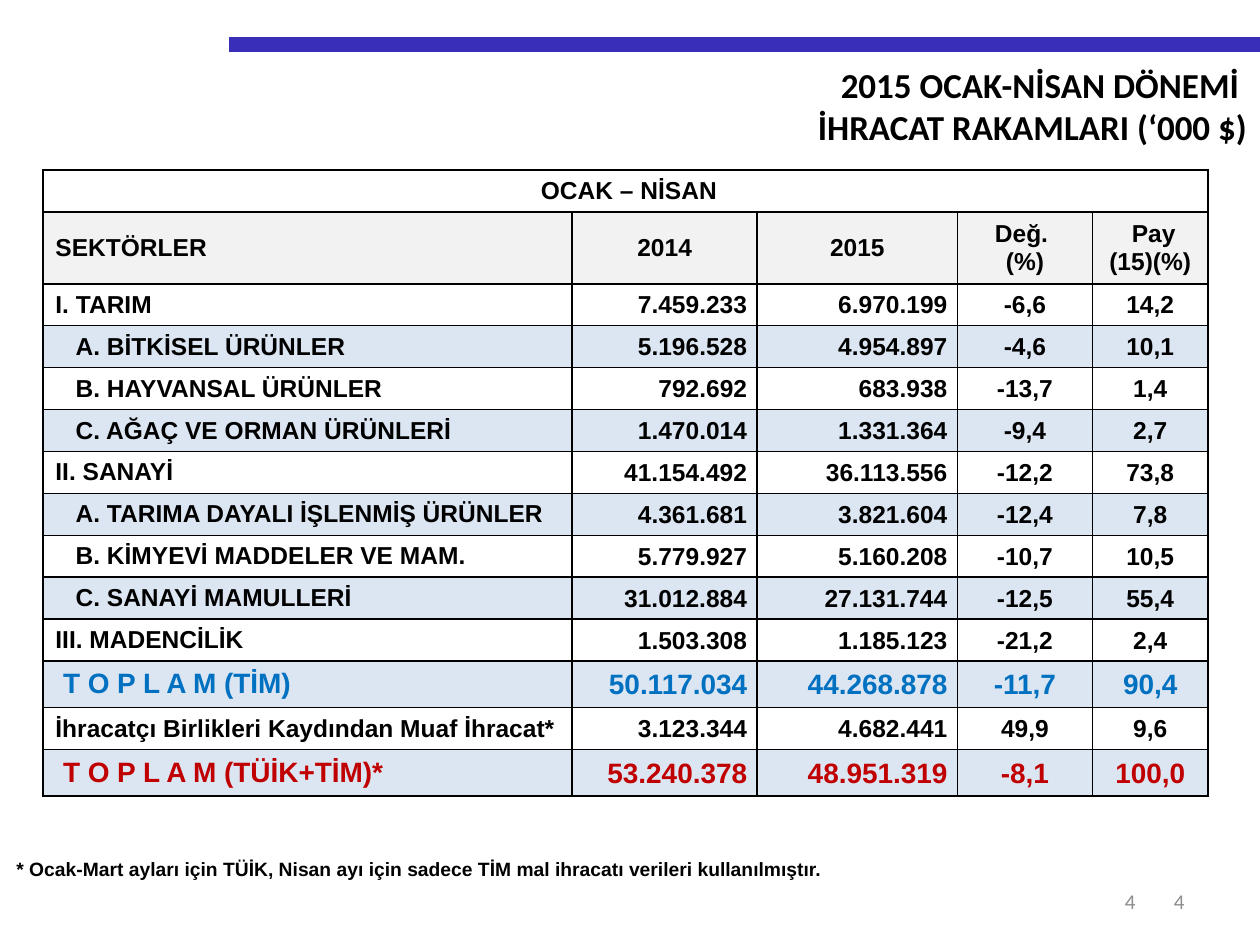
from lxml import etree
from pptx import Presentation
from pptx.dml.color import RGBColor
from pptx.enum import shapes, text
from pptx.oxml.ns import qn
from pptx.util import Inches, Pt

COLORS = {"ink": "000000", "rule": "382EB8", "head": "F2F2F2", "band": "DCE6F2",
          "blue": "0070C0", "red": "C00000", "page": "8C8C8C"}
LEFT, CENTER, RIGHT = text.PP_ALIGN.LEFT, text.PP_ALIGN.CENTER, text.PP_ALIGN.RIGHT
TABLE_TITLE = " OCAK – NİSAN"
HEADINGS = ["SEKTÖRLER", "2014", "2015", "Değ. \n(%)", " Pay\n(15)(%)"]
# Indent in inches, sector, 2014, 2015, change, share
SECTORS = [
    (0, "I. TARIM", "7.459.233", "6.970.199", "-6,6", "14,2"),
    (0.16, "A. BİTKİSEL ÜRÜNLER", "5.196.528", "4.954.897", "-4,6", "10,1"),
    (0.16, "B. HAYVANSAL ÜRÜNLER", "792.692", "683.938", "-13,7", "1,4"),
    (0.16, "C. AĞAÇ VE ORMAN ÜRÜNLERİ", "1.470.014", "1.331.364", "-9,4", "2,7"),
    (0, "II. SANAYİ", "41.154.492", "36.113.556", "-12,2", "73,8"),
    (0.16, "A. TARIMA DAYALI İŞLENMİŞ ÜRÜNLER", "4.361.681", "3.821.604", "-12,4", "7,8"),
    (0.16, "B. KİMYEVİ MADDELER VE MAM.", "5.779.927", "5.160.208", "-10,7", "10,5"),
    (0.16, "C. SANAYİ MAMULLERİ", "31.012.884", "27.131.744", "-12,5", "55,4"),
    (0, "III. MADENCİLİK", "1.503.308", "1.185.123", "-21,2", "2,4"),
    (0.06, "T O P L A M (TİM)", "50.117.034", "44.268.878", "-11,7", "90,4"),
    (0, "İhracatçı Birlikleri Kaydından Muaf İhracat*", "3.123.344", "4.682.441", "49,9", "9,6"),
    (0.06, "T O P L A M (TÜİK+TİM)*", "53.240.378", "48.951.319", "-8,1", "100,0"),
]
TOTALS = {9: "blue", 11: "red"}


def rgb(name):
    return RGBColor.from_string(COLORS[name])


def write(tf, content, align, size, color="ink", name="Arial", bold=True, indent=0):
    tf.text = content
    for p in tf.paragraphs:
        p.alignment = align
        if indent:
            p._p.get_or_add_pPr().set("marL", str(Inches(indent)))
        for r in p.runs:
            for key, value in {"size": Pt(size), "name": name, "bold": bold}.items():
                setattr(r.font, key, value)
            r.font.color.rgb = rgb(color)


def draw_borders(cell):
    tcPr = cell._tc.get_or_add_tcPr()
    for side in ("lnL", "lnR", "lnT", "lnB"):
        ln = etree.SubElement(tcPr, qn(f"a:{side}"), w=str(Pt(1)))
        fill = etree.SubElement(ln, qn("a:solidFill"))
        etree.SubElement(fill, qn("a:srgbClr"), val=COLORS["ink"])


def set_cell(cell, fill=None, insets=None):
    cell.vertical_anchor = text.MSO_ANCHOR.MIDDLE
    if insets:
        for side, value in zip(("left", "top", "right", "bottom"), insets):
            setattr(cell, f"margin_{side}", Inches(value))
    if fill:
        cell.fill.solid()
        cell.fill.fore_color.rgb = rgb(fill)
    else:
        cell.fill.background()


def add_plain_table(s, rows, cols, box):
    table = s.shapes.add_table(rows, cols, *map(Inches, box)).table
    table.first_row = table.horz_banding = False
    return table


def add_header(s, x, y, w, h):
    rule = s.shapes.add_connector(shapes.MSO_CONNECTOR.STRAIGHT, Inches(1.82),
                                  Inches(0.35), Inches(x + w), Inches(0.35))
    rule.line.width = Pt(8.5)
    rule.line.color.rgb = rgb("rule")
    etree.SubElement(rule._element.spPr, qn("a:effectLst"))
    title = s.shapes.title
    for key, value in zip(("left", "top", "width", "height"), (x, y, w, h)):
        setattr(title, key, Inches(value))
    tf = title.text_frame
    tf.vertical_anchor = text.MSO_ANCHOR.TOP
    tf.auto_size = text.MSO_AUTO_SIZE.NONE
    write(tf, "2015 OCAK-NİSAN DÖNEMİ \nİHRACAT RAKAMLARI (‘000 $)", RIGHT, 20, name="Calibri")


def add_export_table(s, x, y, w, h):
    table = add_plain_table(s, len(SECTORS) + 2, len(HEADINGS), (x, y, w, h))
    for col, width in zip(table.columns, (4.2, 1.47, 1.59, 1.07, 0.92)):
        col.width = Inches(width)
    head_h, total_h = 0.57, 0.37
    row_h = (h - head_h - len(TOTALS) * total_h) / (len(SECTORS) + 1 - len(TOTALS))
    for i, row in enumerate(table.rows):
        row.height = Inches(head_h if i == 1 else total_h if i - 2 in TOTALS else row_h)
        for cell in row.cells:
            draw_borders(cell)

    table.cell(0, 0).merge(table.cell(0, len(HEADINGS) - 1))
    set_cell(table.cell(0, 0))
    write(table.cell(0, 0).text_frame, TABLE_TITLE, CENTER, 14)
    for j, heading in enumerate(HEADINGS):
        set_cell(table.cell(1, j), "head")
        write(table.cell(1, j).text_frame, heading, CENTER if j else LEFT, 14)

    value_insets, share_insets = (0.01, 0.01, 0.08, 0), (0.01, 0.01, 0.01, 0)
    columns = [(LEFT, None)] + [(RIGHT, value_insets)] * 2 + [(CENTER, share_insets)] * 2
    for i, (indent, *values) in enumerate(SECTORS):
        for j, (value, (align, insets)) in enumerate(zip(values, columns)):
            cell = table.cell(i + 2, j)
            set_cell(cell, "band" if i % 2 else None, insets)
            write(cell.text_frame, value, align, 16 if i in TOTALS else 14,
                  TOTALS.get(i, "ink"), indent=0 if j else indent)


def add_footnote(s, x, y, w, h):
    cell = add_plain_table(s, 1, 1, (x, y, w, h)).cell(0, 0)
    set_cell(cell, insets=(0.01, 0.01, 0.01, 0))
    write(cell.text_frame, "* Ocak-Mart ayları için TÜİK, Nisan ayı için sadece TİM "
          "mal ihracatı verileri kullanılmıştır.", LEFT, 11)


def add_page_number(s, x, y, w, h):
    tf = s.shapes.add_textbox(*map(Inches, (x, y, w, h))).text_frame
    tf.word_wrap = True
    tf.vertical_anchor = text.MSO_ANCHOR.MIDDLE
    write(tf, "4", RIGHT, 12, "page", "Calibri", bold=False)


def main():
    prs = Presentation()
    prs.slide_width, prs.slide_height = Inches(10), Inches(7.5)
    s = prs.slides.add_slide(prs.slide_layouts[5])
    add_header(s, 1.06, 0.45, 8.94, 0.77)
    add_export_table(s, 0.34, 1.35, 9.25, 4.97)
    add_footnote(s, 0.12, 6.74, 7.4, 0.31)
    for x, w in ((7.17, 2.33), (7.01, 2.1)):
        add_page_number(s, x, 6.95, w, 0.4)
    prs.save("out.pptx")


if __name__ == "__main__":
    main()
